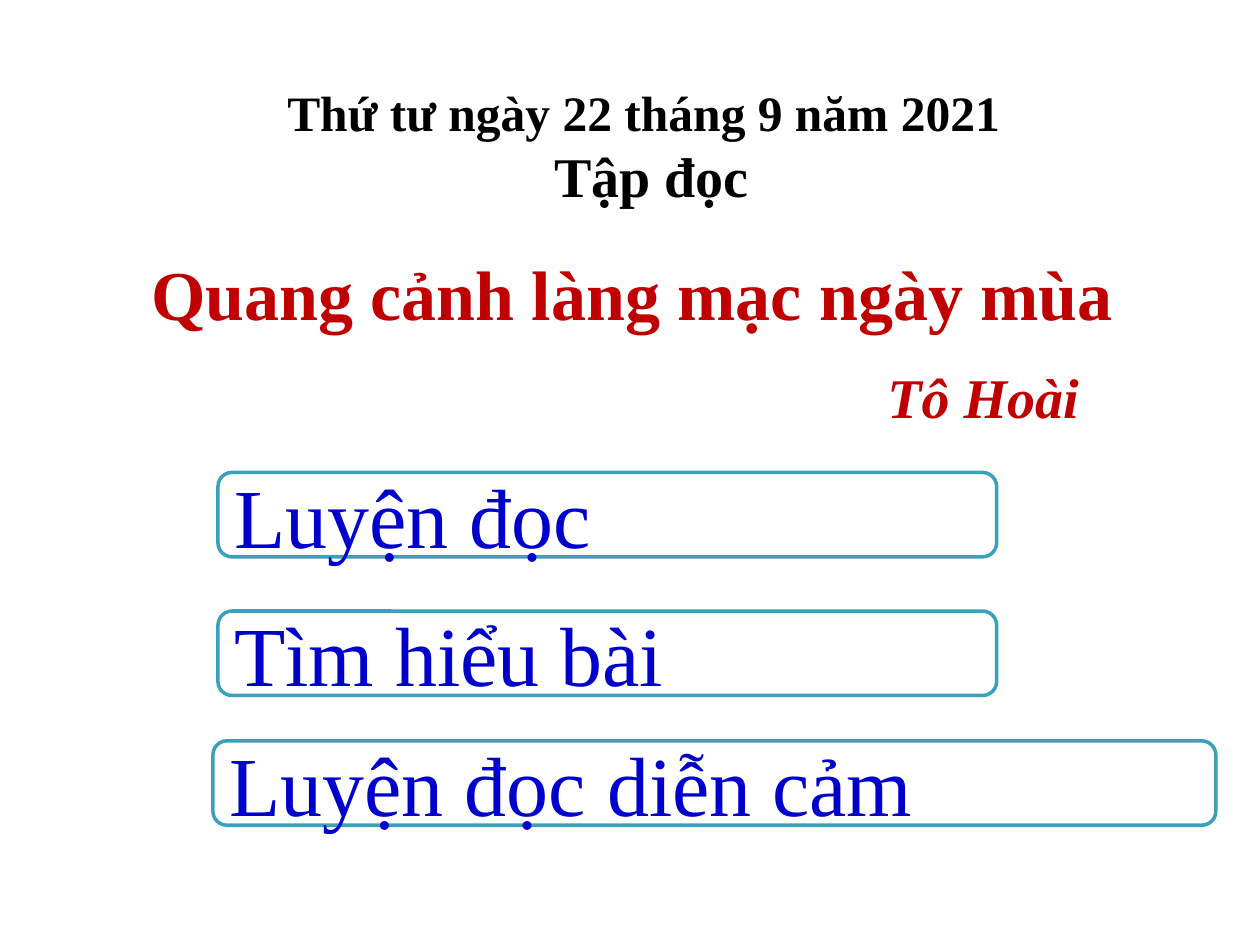
"""Build the reading-lesson title slide with its three activity boxes."""
from dataclasses import dataclass, field

from pptx import Presentation
from pptx import util as u
from pptx.dml.color import RGBColor
from pptx.enum import shapes, text

FONT = "Times New Roman"
BLACK = RGBColor(0x00, 0x00, 0x00)
RED = RGBColor(0xC0, 0x00, 0x00)
BLUE = RGBColor(0x00, 0x00, 0xCC)
TEAL = RGBColor(0x3B, 0xA0, 0xBB)
LEFT, CENTER, RIGHT = text.PP_ALIGN.LEFT, text.PP_ALIGN.CENTER, text.PP_ALIGN.RIGHT


@dataclass
class Line:
    text: str
    size: float
    color: RGBColor
    align: text.PP_ALIGN = LEFT
    before: float = 0
    margins: dict[str, float] = field(default_factory=dict)
    style: dict[str, bool] = field(default_factory=dict)


@dataclass
class Box:
    left: float
    top: float
    width: float
    height: float
    lines: list[Line]

    def bounds(self) -> list[u.Length]:
        return [u.Pt(v) for v in (self.left, self.top, self.width, self.height)]


BOLD = {"bold": True}
HEADINGS = [
    Box(93.6, 43.2, 557.28, 114.48, [
        Line("Thứ tư ngày 22 tháng 9 năm 2021", 28.3, BLACK,
             margins={"marL": 63.5}, style=BOLD),
        Line("Tập đọc", 32, BLACK, CENTER, style=BOLD),
    ]),
    Box(46.08, 139.68, 630, 113.76, [
        Line("Quang cảnh làng mạc ngày mùa", 40, RED, CENTER, style=BOLD),
        Line("Tô Hoài", 32, RED, RIGHT, before=16,
             margins={"marR": 52.5}, style={"bold": True, "italic": True}),
    ]),
]
ACTIVITIES = [
    Box(left, top, width, 48.24, [Line(label, 48, BLUE)])
    for label, left, top, width in (
        ("Luyện đọc", 124.56, 270, 444.96),
        ("Tìm hiểu bài", 124.56, 349.2, 444.96),
        ("Luyện đọc diễn cảm", 121.68, 423.36, 573.12),
    )
]


def write(tf, lines: list[Line], **frame) -> None:
    for name, value in {"word_wrap": True, **frame}.items():
        setattr(tf, name, value)
    for i, line in enumerate(lines):
        p = tf.add_paragraph() if i else tf.paragraphs[0]
        p.alignment = line.align
        if line.before:
            p.space_before = u.Pt(line.before)
        for side, value in line.margins.items():
            p._p.get_or_add_pPr().set(side, str(u.Pt(value)))
        r = p.add_run()
        r.text = line.text
        for name, value in {"name": FONT, "size": u.Pt(line.size), **line.style}.items():
            setattr(r.font, name, value)
        r.font.color.rgb = line.color


def draw_activity(s, box: Box) -> None:
    sp = s.shapes.add_shape(shapes.MSO_SHAPE.FLOWCHART_ALTERNATE_PROCESS, *box.bounds())
    sp.shadow.inherit = False
    sp.fill.background()
    sp.line.color.rgb = TEAL
    sp.line.width = u.Pt(2)
    write(sp.text_frame, box.lines, vertical_anchor=text.MSO_ANCHOR.MIDDLE)


def draw_heading(s, box: Box) -> None:
    sp = s.shapes.add_textbox(*box.bounds())
    write(sp.text_frame, box.lines, auto_size=text.MSO_AUTO_SIZE.SHAPE_TO_FIT_TEXT)


def main() -> None:
    prs = Presentation()
    prs.slide_width, prs.slide_height = u.Pt(720), u.Pt(540)
    s = prs.slides.add_slide(prs.slide_layouts[6])
    for box in ACTIVITIES:
        draw_activity(s, box)
    for box in HEADINGS:
        draw_heading(s, box)
    prs.save("out.pptx")


if __name__ == "__main__":
    main()
